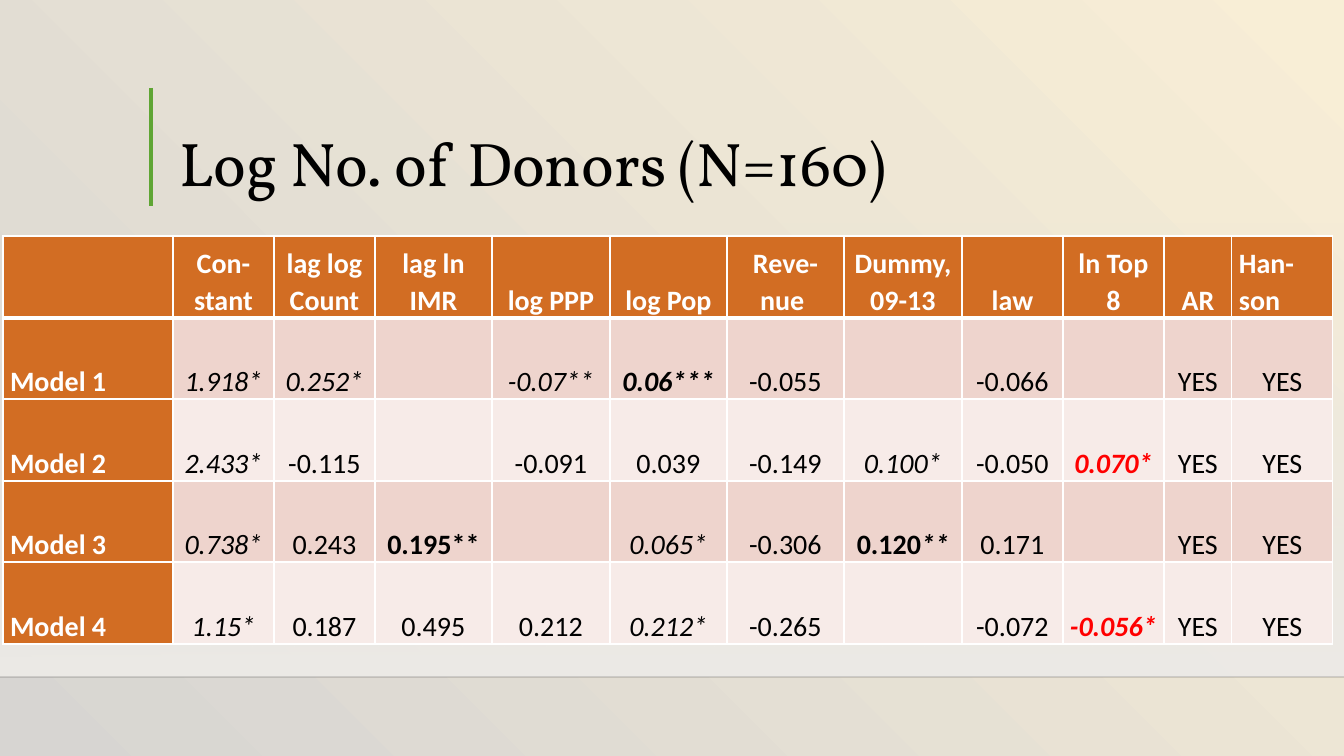
from lxml import etree
from pptx import Presentation
from pptx.dml.color import RGBColor
from pptx.enum.shapes import MSO_CONNECTOR as Connector, MSO_SHAPE as Shape
from pptx.enum.text import MSO_ANCHOR as Anchor, MSO_AUTO_SIZE as AutoSize, PP_ALIGN as Align
from pptx.oxml.ns import qn
from pptx.util import Pt

WIDTH, HEIGHT = 1344, 756
PX = 12192000 / WIDTH

COLOURS = {
    "black": "000000", "white": "FFFFFF", "red": "FF0000",
    "warm": "F8EED6", "grey": "D7D5D2", "haze": "EDEBE7", "rule": "000001",
    "green": "5FA534", "orange": "D26D23", "band dark": "EED4CD", "band light": "F7EBE8",
}

COLUMN_WIDTHS = [170, 101, 101, 117, 118, 117, 117, 118, 101, 101, 68, 101]
ROW_HEIGHTS = [82, 81, 82, 81, 82]
HEADINGS = ["", "Con-stant", "lag log Count", "lag ln IMR", "log PPP", "log Pop", "Reve-nue ",
            "Dummy, 09-13", "law", "ln Top 8", "AR", "Han-son"]
MODELS = [
    ["Model 1", "1.918*", "0.252*", "", "-0.07**", "0.06***", "-0.055", "", "-0.066", "",
     "YES", "YES"],
    ["Model 2", "2.433*", "-0.115", "", "-0.091", "0.039", "-0.149", "0.100*", "-0.050", "0.070*",
     "YES", "YES"],
    ["Model 3", "0.738*", "0.243", "0.195**", "", "0.065*", "-0.306", "0.120**", "0.171", "",
     "YES", "YES"],
    ["Model 4", "1.15*", "0.187", "0.495", "0.212", "0.212*", "-0.265", "", "-0.072", "-0.056*",
     "YES", "YES"],
]
# Coefficients that stand out; other starred values are plain italic
HIGHLIGHTS = {
    "0.06***": [("0.06***", {"bold": True, "italic": True})],
    "0.070*": [("0.070*", {"bold": True, "italic": True, "colour": "red"})],
    "-0.056*": [("-0.056*", {"bold": True, "italic": True, "colour": "red"})],
    "0.195**": [("0.195**", {"bold": True})],
    "0.120**": [("0.120", {"bold": True}), ("**", {"bold": True, "italic": True})],
}


def px(length):
    return round(length * PX)


def rgb(colour):
    return RGBColor.from_string(COLOURS[colour])


def add_run(paragraph, text, font="Calibri", size=20, colour="black", bold=False, italic=False):
    run = paragraph.add_run()
    run.text = text
    run.font.name = font
    run.font.size = Pt(size)
    run.font.bold = bold
    run.font.italic = italic
    run.font.color.rgb = rgb(colour)


def add_colour(parent, colour, alpha=100):
    element = etree.SubElement(parent, qn("a:srgbClr"), val=COLOURS[colour])
    if alpha < 100:
        etree.SubElement(element, qn("a:alpha"), val=str(alpha * 1000))


def set_gradient(gradient, stops):
    """Replace the stops of a gradient fill and drop its direction."""
    for child in list(gradient):
        gradient.remove(child)
    stop_list = etree.SubElement(gradient, qn("a:gsLst"))
    for position, colour, alpha in stops:
        stop = etree.SubElement(stop_list, qn("a:gs"), pos=str(position * 1000))
        add_colour(stop, colour, alpha)


class ResultsSlide:
    def __init__(self, presentation):
        self.slide = presentation.slides.add_slide(presentation.slide_layouts[5])

    def background(self):
        self.slide.background.fill.gradient()
        gradient = self.slide.element.find(".//" + qn("a:gradFill"))
        set_gradient(gradient, [(0, "warm", 100), (100, "grey", 100)])
        circle = etree.SubElement(gradient, qn("a:path"), path="circle")
        etree.SubElement(circle, qn("a:fillToRect"), l="100000", b="100000")

    def haze(self, left, top, width, height):
        shape = self.slide.shapes.add_shape(
            Shape.RECTANGLE, px(left), px(top), px(width), px(height))
        shape.shadow.inherit = False
        shape.line.fill.background()
        shape.fill.gradient()
        gradient = shape.element.spPr.find(qn("a:gradFill"))
        set_gradient(gradient, [(0, "haze", 0), (100, "haze", 100)])
        etree.SubElement(gradient, qn("a:lin"), ang="5400000", scaled="0")

    def line(self, start, end, colour, width, alpha=100):
        connector = self.slide.shapes.add_connector(
            Connector.STRAIGHT, *map(px, start), *map(px, end))
        connector.line.width = Pt(width)
        connector.line.color.rgb = rgb(colour)
        properties = connector.element.spPr
        if alpha < 100:
            solid = properties.find(".//" + qn("a:solidFill"))
            solid.remove(solid[0])
            add_colour(solid, colour, alpha)
        etree.SubElement(properties, qn("a:effectLst"))

    def title(self, text, left, top, width, height):
        title = self.slide.shapes.title
        title.left, title.top, title.width, title.height = map(px, (left, top, width, height))
        frame = title.text_frame
        frame.word_wrap = True
        frame.auto_size = AutoSize.NONE
        frame.vertical_anchor = Anchor.BOTTOM
        paragraph = frame.paragraphs[0]
        paragraph.alignment = Align.LEFT
        paragraph.line_spacing = 0.9
        add_run(paragraph, text, font="Vollkorn", size=44)

    def cell(self, cell, runs, fill, align, top=1, bottom=1):
        cell.vertical_anchor = Anchor.BOTTOM
        cell.margin_left = cell.margin_right = px(7)
        cell.margin_top = cell.margin_bottom = 0
        properties = cell._tc.get_or_add_tcPr()
        for side, width in (("L", 1), ("R", 1), ("T", top), ("B", bottom)):
            border = etree.SubElement(properties, qn("a:ln" + side), w=str(Pt(width)))
            add_colour(etree.SubElement(border, qn("a:solidFill")), "white")
        cell.fill.solid()
        cell.fill.fore_color.rgb = rgb(fill)
        paragraph = cell.text_frame.paragraphs[0]
        paragraph.alignment = align
        paragraph.line_spacing = 1.07
        for text, style in runs:
            add_run(paragraph, text, **style)

    def table(self, left, top):
        rows = [HEADINGS] + MODELS
        table = self.slide.shapes.add_table(
            len(rows), len(HEADINGS), px(left), px(top),
            px(sum(COLUMN_WIDTHS)), px(sum(ROW_HEIGHTS))).table
        for column, width in zip(table.columns, COLUMN_WIDTHS):
            column.width = px(width)
        for row, height in zip(table.rows, ROW_HEIGHTS):
            row.height = px(height)
        last = len(HEADINGS) - 1
        for i, values in enumerate(rows):
            for j, text in enumerate(values):
                heading = i == 0 or j == 0
                if heading:
                    runs = [(text, {"bold": True, "colour": "white"})]
                    fill = "orange"
                else:
                    runs = HIGHLIGHTS.get(text, [(text, {"italic": text.endswith("*")})])
                    fill = "band dark" if i % 2 else "band light"
                left_aligned = j == 0 or (i == 0 and j == last)
                self.cell(table.cell(i, j), runs if text else [], fill,
                          Align.LEFT if left_aligned else Align.CENTER,
                          top=3 if i == 1 else 1, bottom=3 if i == 0 else 1)


def main():
    presentation = Presentation()
    presentation.slide_width, presentation.slide_height = px(WIDTH), px(HEIGHT)
    results = ResultsSlide(presentation)

    # Backdrop
    results.background()
    results.haze(0, 222, WIDTH, 455)
    results.line((0, 677), (WIDTH, 677), "rule", 1, alpha=20)

    # Title with its accent line
    results.line((151, 88), (151, 206), "green", 3)
    results.title("Log No. of Donors (N=160)", 169, 89, 1049, 116)

    # Regression results
    results.table(3, 236)

    presentation.save("out.pptx")


if __name__ == "__main__":
    main()
